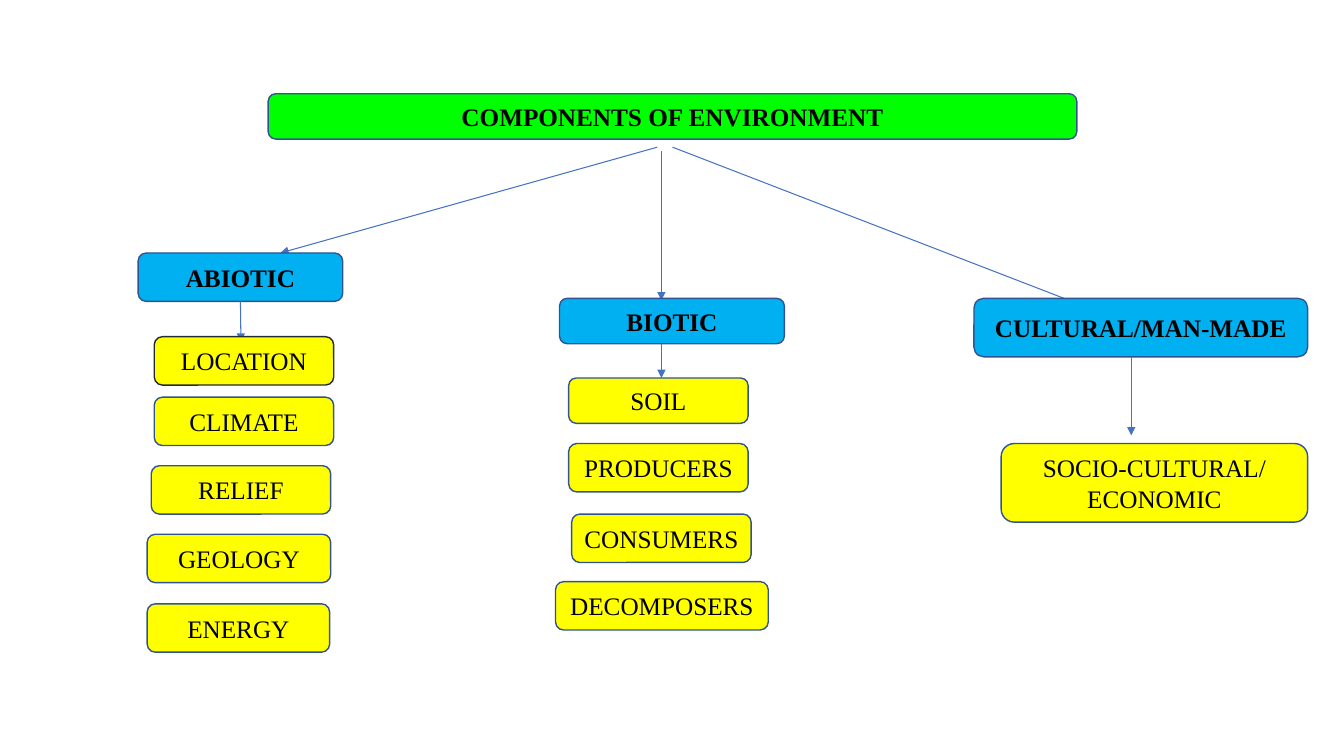
import pptx
import pptx.util
import pptx.dml.color
import pptx.enum.shapes
import pptx.enum.text
import lxml.etree
from pptx.util import Inches

RGB = pptx.dml.color.RGBColor
GREEN = RGB(0x00, 0xFF, 0x00)
CYAN = RGB(0x00, 0xB0, 0xF0)
YELLOW = RGB(0xFF, 0xFF, 0x00)
BLACK = RGB(0x00, 0x00, 0x00)
NAVY = RGB(0x31, 0x53, 0x8F)
SLATE = RGB(0x22, 0x2A, 0x35)
BLUE = RGB(0x44, 0x72, 0xC4)

deck = pptx.Presentation()
deck.slide_width = Inches(13.33)
deck.slide_height = Inches(7.5)
slide = deck.slides.add_slide(deck.slide_layouts[6])


def add_box(text, left, top, width, height, fill, bold=False):
    box = slide.shapes.add_shape(
        pptx.enum.shapes.MSO_SHAPE.ROUNDED_RECTANGLE,
        Inches(left), Inches(top), Inches(width), Inches(height))
    box.shadow.inherit = False
    box.fill.solid()
    box.fill.fore_color.rgb = fill
    box.line.color.rgb = NAVY
    box.line.width = pptx.util.Pt(1)
    frame = box.text_frame
    frame.word_wrap = True
    frame.vertical_anchor = pptx.enum.text.MSO_ANCHOR.MIDDLE
    frame.text = text
    para = frame.paragraphs[0]
    para.alignment = pptx.enum.text.PP_ALIGN.CENTER
    font = para.runs[0].font
    font.name = "Times New Roman"
    font.size = pptx.util.Pt(18)
    font.bold = bold
    font.color.rgb = BLACK
    return box


def add_arrow(x1, y1, x2, y2):
    arrow = slide.shapes.add_connector(
        pptx.enum.shapes.MSO_CONNECTOR.STRAIGHT,
        Inches(x1), Inches(y1), Inches(x2), Inches(y2))
    arrow.line.color.rgb = BLUE
    arrow.line.width = pptx.util.Pt(0.75)
    line = arrow.line._get_or_add_ln()
    lxml.etree.SubElement(line, pptx.oxml.ns.qn("a:tailEnd"), type="triangle")
    props = arrow._element.spPr
    lxml.etree.SubElement(props, pptx.oxml.ns.qn("a:effectLst"))
    return arrow


# Title and its three branches
add_box("COMPONENTS OF ENVIRONMENT", 2.66, 0.93, 8.02, 0.45, GREEN, True)
add_arrow(6.52, 1.46, 2.78, 2.51)
add_arrow(6.56, 1.5, 6.56, 2.98)
add_arrow(6.67, 1.46, 10.76, 3.04)

# Group heads
add_box("CULTURAL/MAN-MADE", 9.66, 2.96, 3.31, 0.58, CYAN, True)
add_box("BIOTIC", 5.55, 2.96, 2.23, 0.45, CYAN, True)
abiotic = add_box("ABIOTIC", 1.37, 2.51, 2.03, 0.48, CYAN, True)

# Arrows from the heads to their members
add_arrow(11.22, 3.54, 11.22, 4.32)
add_arrow(6.56, 3.41, 6.56, 3.75)
add_arrow(2.39, 2.99, 2.39, 3.39).begin_connect(abiotic, 2)

# Members of each group
location = add_box("LOCATION", 1.53, 3.34, 1.78, 0.48, YELLOW)
location.line.color.rgb = SLATE
members = [
    ("CLIMATE", 1.53, 3.94, 1.78, 0.48),
    ("RELIEF", 1.5, 4.62, 1.78, 0.48),
    ("GEOLOGY", 1.46, 5.3, 1.82, 0.48),
    ("ENERGY", 1.46, 5.99, 1.81, 0.48),
    ("SOIL", 5.64, 3.75, 1.78, 0.45),
    ("PRODUCERS", 5.64, 4.4, 1.78, 0.48),
    ("CONSUMERS", 5.67, 5.1, 1.78, 0.48),
    ("DECOMPOSERS", 5.51, 5.77, 2.11, 0.48),
    ("SOCIO-CULTURAL/ECONOMIC", 9.93, 4.4, 3.04, 0.78),
]
for text, left, top, width, height in members:
    add_box(text, left, top, width, height, YELLOW)

deck.save("out.pptx")
